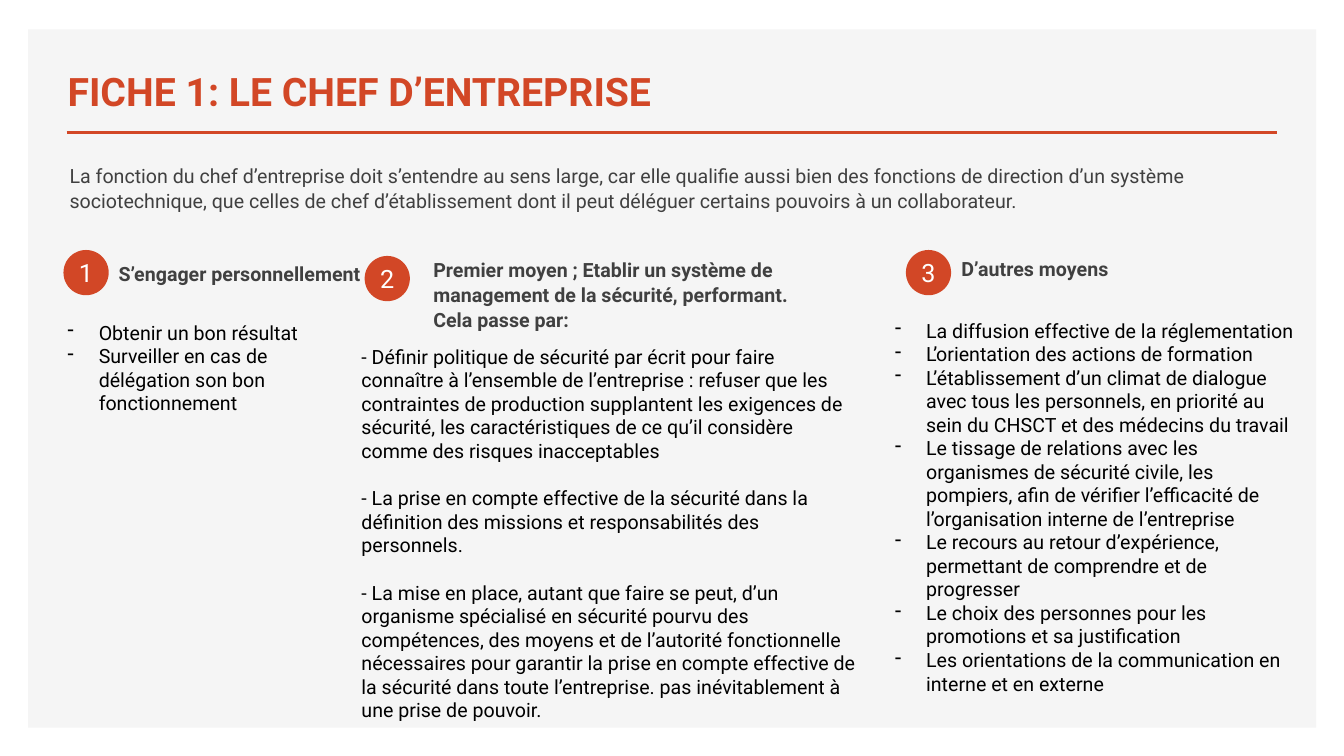
from dataclasses import dataclass

from lxml.etree import SubElement
from pptx import Presentation
from pptx.dml.color import RGBColor
from pptx.enum.shapes import MSO_CONNECTOR as Link, MSO_SHAPE as Preset
from pptx.enum.text import MSO_ANCHOR as Anchor, MSO_AUTO_SIZE as Fit, PP_ALIGN as Align
from pptx.oxml.ns import qn
from pptx.util import Cm, Pt


@dataclass(frozen=True)
class Theme:
    """Colours, font and type sizes of the sheet."""
    accent: RGBColor = RGBColor(0xD2, 0x47, 0x26)
    panel: RGBColor = RGBColor(0xF5, 0xF5, 0xF5)
    grey: RGBColor = RGBColor(0x40, 0x40, 0x40)
    black: RGBColor = RGBColor(0, 0, 0)
    white: RGBColor = RGBColor(0xFF, 0xFF, 0xFF)
    font: str = "Roboto"
    title: int = 28
    number: int = 18
    text: int = 14


@dataclass(frozen=True)
class Box:
    """A rectangle in centimetres."""
    left: float
    top: float
    width: float
    height: float

    def inner(self, dx, dy, width, height):
        """Return a box offset from this one's corner."""
        return Box(self.left + dx, self.top + dy, width, height)

    def emu(self):
        """Return the four lengths for python-pptx."""
        return Cm(self.left), Cm(self.top), Cm(self.width), Cm(self.height)


@dataclass(frozen=True)
class Column:
    """One numbered column, with offsets measured from its box."""
    box: Box
    badge: tuple
    heading_at: tuple
    list_top: float
    heading: str
    items: tuple
    dashed: bool = True


THEME = Theme()
PANEL = Box(0.71, 0.74, 32.46, 17.6)
BADGE_SIZE = 1.14
INTRO = (
    "La fonction du chef d’entreprise doit s’entendre au sens large, car elle qualifie aussi bien "
    "des fonctions de direction d’un système sociotechnique, que celles de chef d’établissement "
    "dont il peut déléguer certains pouvoirs à un collaborateur."
)
COLUMNS = (
    Column(
        Box(1.45, 6.3, 7.06, 5.08), (0.15, 0), (1.29, 0.13, 6.78, 0.97), 1.65,
        "S’engager personnellement",
        ("Obtenir un bon résultat",
         "Surveiller en cas de délégation son bon fonctionnement"),
    ),
    Column(
        Box(8.86, 6.3, 13.06, 11.51), (0.33, 0.15), (1.81, 0.02, 9.98, 1.14), 2.26,
        "Premier moyen ; Etablir un système de management de la sécurité, performant. "
        "Cela passe par:",
        ("- Définir politique de sécurité par écrit pour faire connaître à l’ensemble de "
         "l’entreprise : refuser que les contraintes de production supplantent les exigences de "
         "sécurité, les caractéristiques de ce qu’il considère comme des risques inacceptables",
         "- La prise en compte effective de la sécurité dans la définition des missions et "
         "responsabilités des personnels.",
         "- La mise en place, autant que faire se peut, d’un organisme spécialisé en sécurité "
         "pourvu des compétences, des moyens et de l’autorité fonctionnelle nécessaires pour "
         "garantir la prise en compte effective de la sécurité dans toute l’entreprise. pas "
         "inévitablement à une prise de pouvoir."),
        dashed=False,
    ),
    Column(
        Box(22.3, 6.3, 10.74, 12.04), (0.53, 0), (1.68, 0, 7.39, 1.93), 1.6,
        "D’autres moyens",
        ("La diffusion effective de la réglementation",
         "L’orientation des actions de formation",
         "L’établissement d’un climat de dialogue avec tous les personnels, en priorité au sein "
         "du CHSCT et des médecins du travail",
         "Le tissage de relations avec les organismes de sécurité civile, les pompiers, afin de "
         "vérifier l’efficacité de l’organisation interne de l’entreprise",
         "Le recours au retour d’expérience, permettant de comprendre et de progresser",
         "Le choix des personnes pour les promotions et sa justification",
         "Les orientations de la communication en interne et en externe"),
    ),
)


def write(paragraph, text, size, colour, bold=False):
    """Add one styled run to a paragraph."""
    run = paragraph.add_run()
    run.text = text
    run.font.name, run.font.size, run.font.bold = THEME.font, Pt(size), bold
    run.font.color.rgb = colour


def write_lead(paragraph, text, bold=False):
    """Write a grey paragraph with fixed line spacing."""
    paragraph.line_spacing = Pt(18)
    paragraph.space_before, paragraph.space_after = Pt(10), Pt(20)
    write(paragraph, text, THEME.text, THEME.grey, bold)


def set_bullet(paragraph, mark=None):
    """Give a paragraph a hanging mark, or no bullet at all."""
    props = paragraph._p.get_or_add_pPr()
    indent = Cm(0.79) if mark else 0
    props.set("marL", str(indent))
    props.set("indent", str(-indent))
    if mark:
        SubElement(props, qn("a:buChar")).set("char", mark)
    else:
        SubElement(props, qn("a:buNone"))


def add_filled(slide, preset, box, colour):
    """Add a flat shape without outline."""
    shape = slide.shapes.add_shape(preset, *box.emu())
    shape.shadow.inherit = False
    shape.fill.solid()
    shape.fill.fore_color.rgb = colour
    shape.line.fill.background()
    return shape


def add_frame(slide, box):
    """Add a wrapping text box and return its text frame."""
    frame = slide.shapes.add_textbox(*box.emu()).text_frame
    frame.word_wrap = True
    return frame


def add_header(slide, box):
    """Lay out the panel, title, rule and introduction."""
    title, intro = slide.shapes.title, slide.placeholders[1]
    panel = add_filled(slide, Preset.RECTANGLE, box, THEME.panel)
    title._element.addprevious(panel._element)

    rule_y = Cm(box.top + 2.59)
    rule = slide.shapes.add_connector(
        Link.STRAIGHT, Cm(box.left + 0.97), rule_y, Cm(box.left + 31.47), rule_y)
    rule.line.color.rgb, rule.line.width = THEME.accent, Pt(2)
    SubElement(rule._element.spPr, qn("a:effectLst"))

    places = ((title, box.inner(0.74, 0.5, 19.1, 1.78)),
              (intro, box.inner(0.79, 3.22, 30.33, 1.83)))
    for holder, place in places:
        holder.left, holder.top, holder.width, holder.height = place.emu()
        holder.text_frame.auto_size = Fit.NONE
        holder.text_frame.word_wrap = True

    title.text_frame.vertical_anchor = Anchor.BOTTOM
    heading = title.text_frame.paragraphs[0]
    heading.alignment = Align.LEFT
    write(heading, "FICHE 1: LE CHEF D’ENTREPRISE", THEME.title, THEME.accent, True)
    lead = intro.text_frame.paragraphs[0]
    write_lead(lead, INTRO)
    set_bullet(lead)


def add_column(slide, box, number, column):
    """Lay out a numbered badge, a heading and its points."""
    badge = add_filled(
        slide, Preset.OVAL, box.inner(*column.badge, BADGE_SIZE, BADGE_SIZE), THEME.accent)
    label = badge.text_frame
    label.margin_left = label.margin_right = label.margin_top = label.margin_bottom = 0
    label.vertical_anchor = Anchor.MIDDLE
    label.paragraphs[0].alignment = Align.CENTER
    write(label.paragraphs[0], str(number), THEME.number, THEME.white)

    heading = add_frame(slide, box.inner(*column.heading_at))
    write_lead(heading.paragraphs[0], column.heading, True)

    points = add_frame(
        slide, box.inner(0, column.list_top, box.width, box.height - column.list_top))
    points.auto_size = Fit.SHAPE_TO_FIT_TEXT
    for index, item in enumerate(column.items):
        point = points.add_paragraph() if index else points.paragraphs[0]
        write(point, item, THEME.text, THEME.black)
        if column.dashed:
            set_bullet(point, "-")
        elif index:
            point.space_before = Pt(17)


def main():
    """Build and save the sheet."""
    deck = Presentation()
    deck.slide_width, deck.slide_height = Cm(33.87), Cm(19.05)
    slide = deck.slides.add_slide(deck.slide_layouts[1])
    add_header(slide, PANEL)
    for number, column in enumerate(COLUMNS, 1):
        add_column(slide, column.box, number, column)
    deck.save("out.pptx")


if __name__ == "__main__":
    main()
